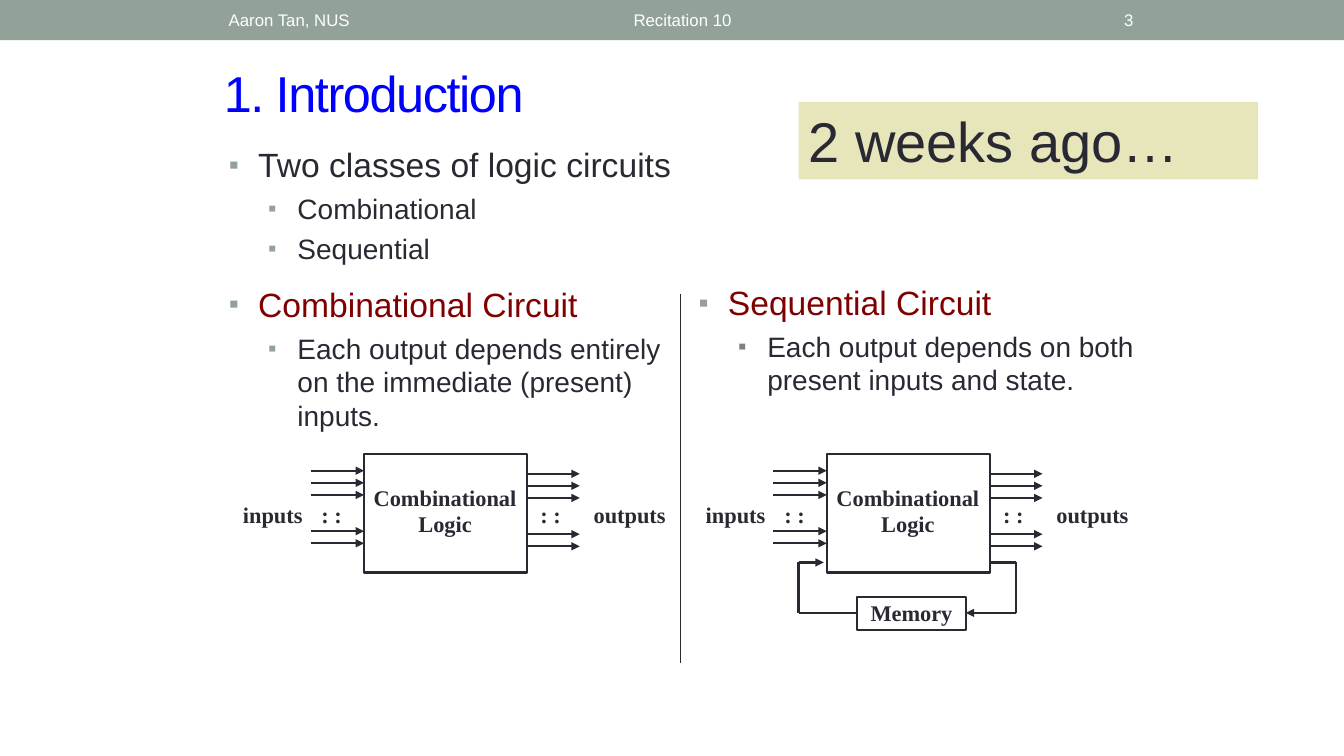
from dataclasses import dataclass
from lxml import etree
from pptx import Presentation
from pptx import util as u
from pptx.dml.color import RGBColor
from pptx.enum import shapes, text
from pptx.oxml.ns import qn

INK, SAGE, WHITE, MAROON = "292934", "93A299", "FFFFFF", "800000"
SANS, SERIF = "Arial", "Times New Roman"
LEFT, CENTER, RIGHT = text.PP_ALIGN.LEFT, text.PP_ALIGN.CENTER, text.PP_ALIGN.RIGHT
TOP, MIDDLE = text.MSO_ANCHOR.TOP, text.MSO_ANCHOR.MIDDLE


@dataclass
class Label:
    text: str
    x: float
    y: float
    w: float
    h: float = 0.37
    inset: float = 0.1
    pad: float = 0.05


@dataclass
class Wire:
    x1: float
    y1: float
    x2: float
    y2: float
    width: float = 1.25
    arrow: bool = True


@dataclass
class Bullet:
    text: str
    level: int = 0
    color: str = INK
    before: float = 0
    mark: str = SAGE


def rgb(value: str) -> RGBColor:
    return RGBColor.from_string(value)


def place(sp, x: float, y: float, w: float, h: float) -> None:
    sp.left, sp.top, sp.width, sp.height = (u.Inches(v) for v in (x, y, w, h))


def write(p, content: str, size=16, font=SANS, color=INK, bold=False, align=LEFT):
    p.alignment = align
    r = p.add_run()
    r.text = content
    r.font.size, r.font.name, r.font.bold = u.Pt(size), font, bold
    r.font.color.rgb = rgb(color)
    return r


def set_frame(tf, inset=0.1, pad=0.05, anchor=TOP) -> None:
    tf.word_wrap = True
    tf.auto_size = text.MSO_AUTO_SIZE.NONE
    tf.vertical_anchor = anchor
    tf.margin_left = tf.margin_right = u.Inches(inset)
    tf.margin_top = tf.margin_bottom = u.Inches(pad)


def add_text(parent, label: Label, anchor=TOP, **fmt) -> None:
    sp = parent.add_textbox(0, 0, 0, 0)
    place(sp, label.x, label.y, label.w, label.h)
    tf = sp.text_frame
    set_frame(tf, label.inset, label.pad, anchor)
    for i, line in enumerate(label.text.split("\n")):
        write(tf.add_paragraph() if i else tf.paragraphs[0], line, **fmt)


def add_box(parent, x, y, w, h, fill="", line=""):
    sp = parent.add_shape(shapes.MSO_SHAPE.RECTANGLE, 0, 0, 0, 0)
    place(sp, x, y, w, h)
    sp.shadow.inherit = False
    if fill:
        sp.fill.solid()
        sp.fill.fore_color.rgb = rgb(fill)
    else:
        sp.fill.background()
    if line:
        sp.line.color.rgb = rgb(line)
        sp.line.width = u.Pt(1.5)
    else:
        sp.line.fill.background()
    return sp


def add_wire(parent, wire: Wire) -> None:
    ends = (u.Inches(v) for v in (wire.x1, wire.y1, wire.x2, wire.y2))
    c = parent.add_connector(shapes.MSO_CONNECTOR.STRAIGHT, *ends)
    c.line.color.rgb = rgb(INK)
    c.line.width = u.Pt(wire.width)
    if wire.arrow:
        etree.SubElement(c.line._get_or_add_ln(), qn("a:tailEnd"), type="triangle")
    etree.SubElement(c._element.spPr, qn("a:effectLst"))


def fill_list(sp, bullets: list[Bullet]) -> None:
    tf = sp.text_frame
    set_frame(tf)
    for i, b in enumerate(bullets):
        p = tf.add_paragraph() if i else tf.paragraphs[0]
        p.level = b.level
        p.space_before = u.Pt(b.before)
        write(p, b.text, size=20 if b.level else 24, color=b.color)
        pPr = p._p.get_or_add_pPr()
        pPr.set("marL", str(u.Inches(0.68 if b.level else 0.29)))
        pPr.set("indent", str(u.Inches(-0.29)))
        color = etree.SubElement(pPr, qn("a:buClr"))
        etree.SubElement(color, qn("a:srgbClr"), val=b.mark)
        etree.SubElement(pPr, qn("a:buSzPct"), val="85000")
        etree.SubElement(pPr, qn("a:buFont"), typeface=SANS)
        etree.SubElement(pPr, qn("a:buChar"), char="▪")


def add_circuit(parent, x: float) -> None:
    box_left, box_right = x + 1.28, x + 2.9
    for label in (
        Label("Combinational\nLogic", x + 1.25, 4.75, 1.67, 0.64),
        Label(": :", x + 0.75, 4.92, 0.42),
        Label(": :", x + 2.92, 4.92, 0.42),
        Label("inputs", x, 4.92, 0.75, inset=0.01),
        Label("outputs", x + 3.5, 4.92, 0.83, inset=0.01),
    ):
        add_text(parent, label, font=SERIF, bold=True, align=CENTER)
    add_box(parent, box_left, 4.5, 1.62, 1.18, line=INK)
    for start, end, top in ((x + 0.75, box_left, 4.67), (box_right, x + 3.42, 4.7)):
        for row in (0, 1, 2, 5, 6):
            y = top + 0.12 * row
            add_wire(parent, Wire(start, y, end, y))


def add_memory(parent) -> None:
    add_box(parent, 8.5, 5.92, 1.08, 0.33, line=INK)
    add_text(parent, Label("Memory", 8.58, 5.93, 0.92, 0.29, 0.01, 0.01),
             font=SERIF, bold=True, align=CENTER)
    for route in (
        [(9.83, 5.58), (10.08, 5.58), (10.08, 6.08), (9.58, 6.08)],
        [(8.5, 6.08), (7.92, 6.08), (7.92, 5.58), (8.17, 5.58)],
    ):
        for i, (a, b) in enumerate(zip(route, route[1:])):
            add_wire(parent, Wire(*a, *b, width=1.5, arrow=i == 2))


def main() -> None:
    prs = Presentation()
    prs.slide_width, prs.slide_height = u.Inches(13.33), u.Inches(7.5)
    s = prs.slides.add_slide(prs.slide_layouts[3])
    title, left_list, right_list = s.placeholders

    add_box(s.shapes, 0, 0, 13.33, 0.4, fill=SAGE)
    place(title, 2.12, 0.57, 9.07, 0.7)
    set_frame(title.text_frame, anchor=MIDDLE)
    r = write(title.text_frame.paragraphs[0], "1. Introduction", size=36, color="0000FF")
    r.font._element.set("spc", "-100")

    place(left_list, 2.17, 1.38, 4.83, 5.37)
    fill_list(left_list, [
        Bullet("Two classes of logic circuits"),
        Bullet("Combinational", 1, before=4.8),
        Bullet("Sequential", 1, before=4.8),
        Bullet("Combinational Circuit", color=MAROON, before=13.5),
        Bullet("Each output depends entirely on the immediate (present) inputs.",
               1, before=4.8),
    ])
    place(right_list, 6.83, 2.75, 4.67, 1.67)
    fill_list(right_list, [
        Bullet("Sequential Circuit", color=MAROON),
        Bullet("Each output depends on both present inputs and state.",
               1, before=4.8, mark="808080"),
    ])

    add_wire(s.shapes, Wire(6.75, 2.92, 6.75, 6.58, width=0.75, arrow=False))
    add_circuit(s.shapes.add_group_shape().shapes, 2.33)
    sequential = s.shapes.add_group_shape().shapes
    add_circuit(sequential, 6.92)
    add_memory(sequential)

    banner = add_box(s.shapes, 7.92, 1.01, 4.56, 0.77, fill="E7E5BA")
    set_frame(banner.text_frame)
    write(banner.text_frame.paragraphs[0], "2 weeks ago…", size=40)

    for label, align in (
        (Label("Aaron Tan, NUS", 2.17, 0.02, 3.17, 0.36), LEFT),
        (Label("Recitation 10", 4.52, 0.02, 4.5, 0.36), CENTER),
        (Label("3", 10.39, 0.02, 0.95, 0.36), RIGHT),
    ):
        add_text(s.shapes, label, MIDDLE, size=12, color=WHITE, align=align)
    prs.save("out.pptx")


if __name__ == "__main__":
    main()
